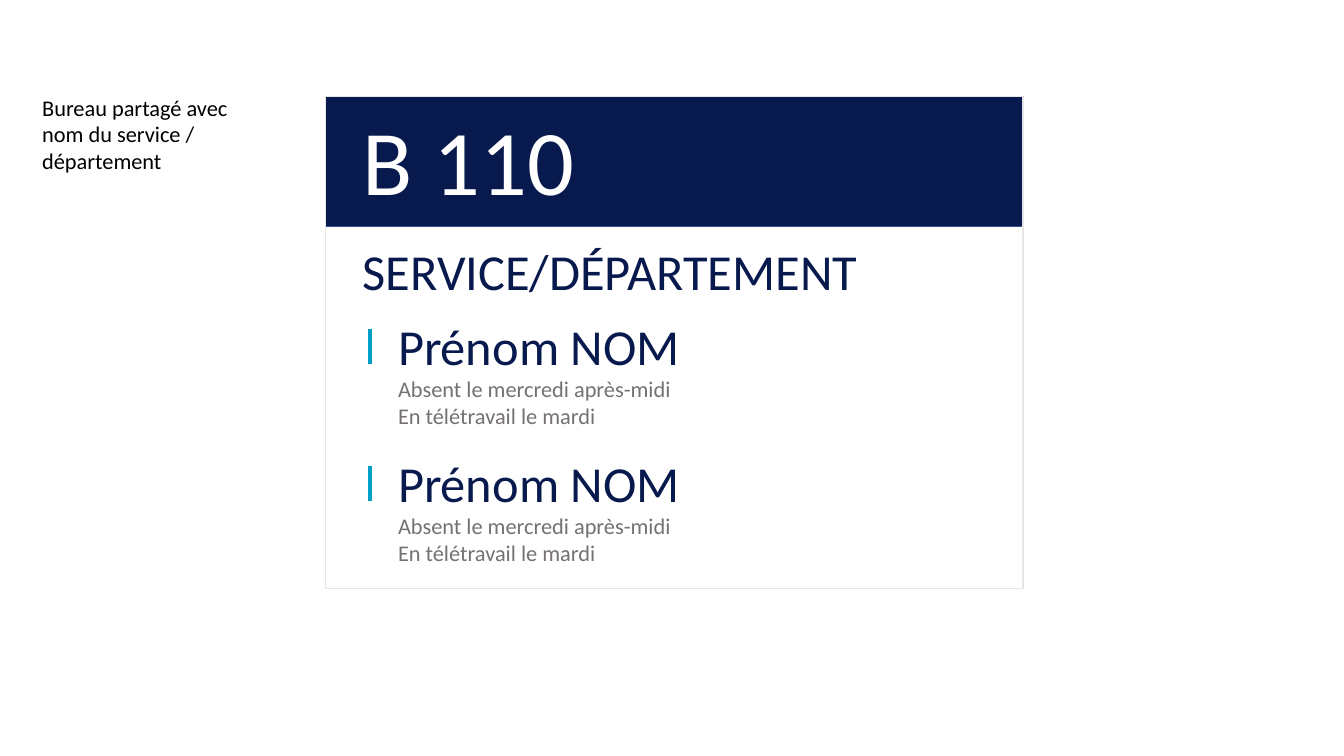
from dataclasses import dataclass

from lxml import etree
from pptx import Presentation
from pptx.dml.color import RGBColor
from pptx.enum.shapes import MSO_CONNECTOR, MSO_SHAPE
from pptx.enum.text import MSO_AUTO_SIZE
from pptx.oxml.ns import qn
from pptx.util import Inches, Pt

RECT = MSO_SHAPE.RECTANGLE
LINE = MSO_CONNECTOR.STRAIGHT
GROW = MSO_AUTO_SIZE.SHAPE_TO_FIT_TEXT

WIDE = Inches(13.33)
HIGH = Inches(7.5)


@dataclass(frozen=True)
class Theme:
    font: str = "Calibri"
    navy: str = "08194E"
    edge: str = "325491"
    frame: str = "E7E6E6"
    teal: str = "00A0C6"
    grey: str = "767171"
    white: str = "FFFFFF"
    black: str = "000000"
    room: int = 66
    name: int = 36
    note: int = 16
    thin: float = 1
    bar: float = 2.75


THEME = Theme()


def col(share):
    return round(WIDE * share / 100)


def row(share):
    return round(HIGH * share / 100)


def add_box(slide, left, top, width, height, line, fill=None):
    box = slide.shapes.add_shape(RECT, col(left), row(top), col(width), row(height))
    box.shadow.inherit = False
    if fill:
        box.fill.solid()
        box.fill.fore_color.rgb = RGBColor.from_string(fill)
    else:
        box.fill.background()
    box.line.color.rgb = RGBColor.from_string(line)
    box.line.width = Pt(THEME.thin)


def add_text(slide, left, top, width, height, lines, size, color):
    box = slide.shapes.add_textbox(col(left), row(top), col(width), row(height))
    frame = box.text_frame
    frame.word_wrap = True
    frame.auto_size = GROW
    for index, words in enumerate(lines):
        para = frame.add_paragraph() if index else frame.paragraphs[0]
        run = para.add_run()
        run.text = words
        run.font.name = THEME.font
        run.font.size = Pt(size)
        run.font.color.rgb = RGBColor.from_string(color)


def add_bar(slide, left, top, height):
    bar = slide.shapes.add_connector(
        LINE, col(left), row(top), col(left), row(top + height)
    )
    bar.line.color.rgb = RGBColor.from_string(THEME.teal)
    bar.line.width = Pt(THEME.bar)
    etree.SubElement(bar._element.spPr, qn("a:effectLst"))


def add_person(slide, top, name, notes):
    add_text(slide, 28.88, top, 42.75, 9.47, [name], THEME.name, THEME.navy)
    add_text(slide, 28.88, top + 7.87, 42.75, 8.53, notes, THEME.note, THEME.grey)
    add_bar(slide, 27.53, top + 2.4, 4.67)


def main():
    deck = Presentation()
    deck.slide_width = WIDE
    deck.slide_height = HIGH
    slide = deck.slides.add_slide(deck.slide_layouts[6])

    add_box(slide, 24.23, 12.8, 51.9, 17.2, THEME.edge, THEME.navy)
    add_box(slide, 24.23, 12.8, 51.9, 65.07, THEME.frame)
    add_text(slide, 26.25, 12.93, 26.78, 16.13, ["B 110"], THEME.room, THEME.white)
    add_text(slide, 26.25, 31.07, 45.45, 9.47, ["SERVICE/DÉPARTEMENT"],
             THEME.name, THEME.navy)

    notes = ["Absent le mercredi après-midi", "En télétravail le mardi"]
    for index in range(2):
        add_person(slide, 41.07 + 18.13 * index, "Prénom NOM", notes)

    add_text(slide, 2.4, 11.73, 18.23, 12.13,
             ["Bureau partagé avec nom du service / département"],
             THEME.note, THEME.black)
    deck.save("out.pptx")


if __name__ == "__main__":
    main()
